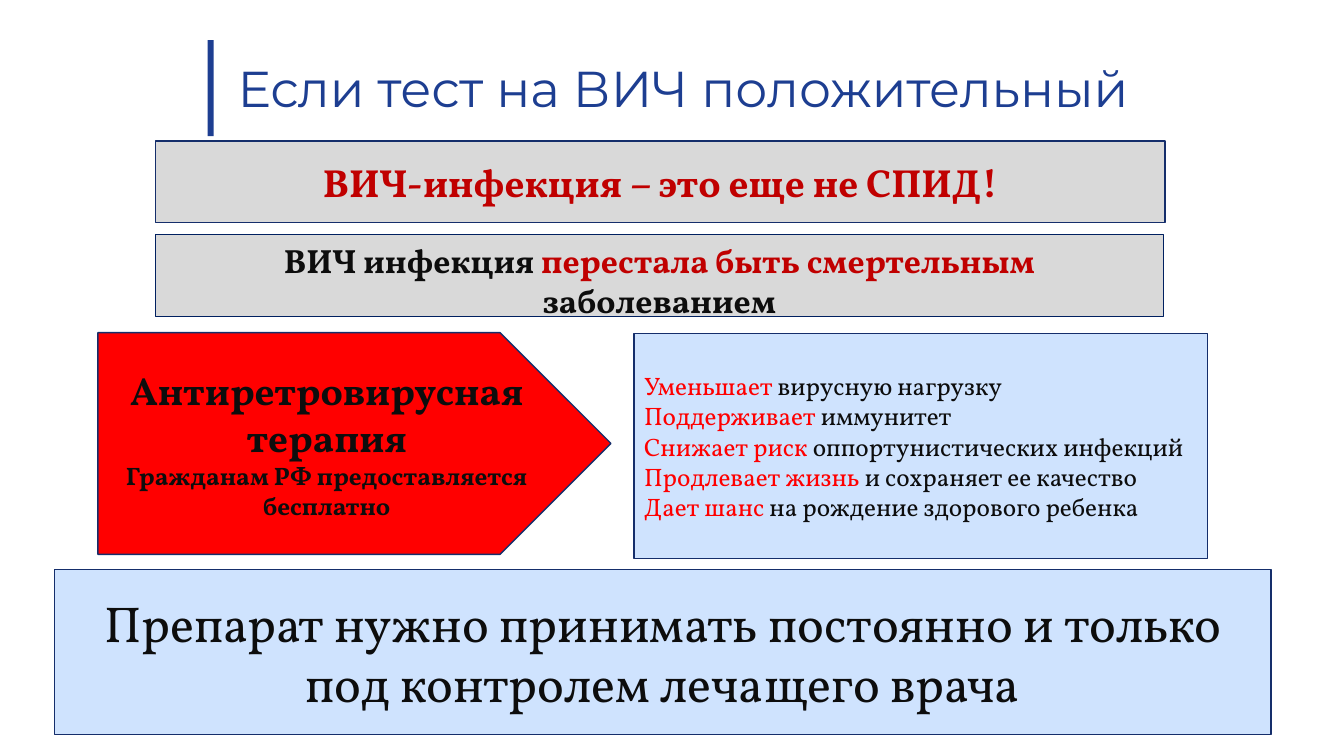
from pptx import Presentation
from pptx.dml.color import RGBColor
from pptx.enum.shapes import MSO_SHAPE
from pptx.enum.text import MSO_ANCHOR, PP_ALIGN
from pptx.util import Inches, Pt

RECTANGLE, PENTAGON = MSO_SHAPE.RECTANGLE, MSO_SHAPE.PENTAGON
TOP, MIDDLE = MSO_ANCHOR.TOP, MSO_ANCHOR.MIDDLE
LEFT, CENTER = PP_ALIGN.LEFT, PP_ALIGN.CENTER
WIDTH, HEIGHT = Inches(13.33), Inches(7.5)
TITLE_FONT, BODY_FONT = "Montserrat", "Vollkorn"
BLUE, NAVY, DEEP_NAVY = "1D3E91", "152E6B", "002060"
GREY, PALE_BLUE = "D9D9D9", "CFE3FE"
BLACK, RED, DARK_RED = "0D0D0D", "FF0000", "C00000"

HEADING_BOX = (15.45, 5.33, 77.63, 12.67)
BANNER_BOX = (11.55, 18.67, 75.15, 10.8)
STATEMENT_BOX = (11.55, 31.07, 75, 10.8)
THERAPY_BOX = (7.28, 44, 38.18, 29.33)
BENEFITS_BOX = (47.18, 44.13, 42.68, 29.73)
ADVICE_BOX = (4.05, 75.33, 90.53, 21.87)

BENEFITS = [
    ("Уменьшает", " вирусную нагрузку"),
    ("Поддерживает", " иммунитет"),
    ("Снижает риск", " оппортунистических инфекций"),
    ("Продлевает жизнь ", "и сохраняет ее качество"),
    ("Дает шанс ", "на рождение здорового ребенка"),
]


def color(value):
    """Turn a hex string into a colour."""
    return RGBColor.from_string(value)


def place(box):
    """Turn a box in percent of the slide into slide lengths."""
    left, top, width, height = box
    return [round(share * side / 100) for share, side in
            ((left, WIDTH), (top, HEIGHT), (width, WIDTH), (height, HEIGHT))]


def write(shape, lines, align=CENTER, anchor=MIDDLE, font=BODY_FONT, bold=False):
    """Write lines, each a size and its (text, colour) parts."""
    frame = shape.text_frame
    frame.word_wrap = True
    frame.vertical_anchor = anchor
    for index, (size, parts) in enumerate(lines):
        paragraph = frame.add_paragraph() if index else frame.paragraphs[0]
        paragraph.alignment = align
        for text, shade in parts:
            run = paragraph.add_run()
            run.text = text
            run.font.name = font
            run.font.size = Pt(size)
            run.font.bold = bold
            run.font.color.rgb = color(shade)


def panel(slide, box, fill, line=NAVY, weight=1, kind=RECTANGLE):
    """Draw a filled shape, outlined when a line colour is given."""
    shape = slide.shapes.add_shape(kind, *place(box))
    shape.shadow.inherit = False
    shape.fill.solid()
    shape.fill.fore_color.rgb = color(fill)
    if line:
        shape.line.color.rgb = color(line)
        shape.line.width = Pt(weight)
    else:
        shape.line.fill.background()
    return shape


def heading(slide, box):
    """Draw the accent bar and the title beside it."""
    left, top, width, height = box
    panel(slide, (left, top, 0.45, height), BLUE, None)
    title = slide.shapes.add_textbox(*place((left + 1.5, top + 0.4, width - 1.5, height)))
    write(title, [(36, [("Если тест на ВИЧ положительный", BLUE)])], LEFT, font=TITLE_FONT)
    title.text_frame.paragraphs[0].line_spacing = 0.9


def banner(slide, box):
    """Draw the main message."""
    write(panel(slide, box, GREY),
          [(28, [("ВИЧ-инфекция – это еще не СПИД!", DARK_RED)])], bold=True)


def statement(slide, box):
    """Draw the supporting message."""
    parts = [("ВИЧ инфекция ", BLACK), ("перестала быть смертельным ", DARK_RED),
             ("заболеванием", BLACK)]
    write(panel(slide, box, GREY, DEEP_NAVY, 0.75), [(24, parts)], anchor=TOP, bold=True)


def therapy(slide, box):
    """Draw the red arrow that names the treatment."""
    write(panel(slide, box, RED, kind=PENTAGON),
          [(28, [("Антиретровирусная терапия", BLACK)]),
           (18, [("Гражданам РФ предоставляется бесплатно", BLACK)])], bold=True)


def benefits(slide, box):
    """Draw the list of treatment benefits."""
    write(panel(slide, box, PALE_BLUE),
          [(18, [(effect, RED), (detail, BLACK)]) for effect, detail in BENEFITS], LEFT)


def advice(slide, box):
    """Draw the closing advice."""
    text = "Препарат нужно принимать постоянно и только под контролем лечащего врача"
    write(panel(slide, box, PALE_BLUE), [(36, [(text, BLACK)])])


def main():
    """Build and save the slide."""
    presentation = Presentation()
    presentation.slide_width, presentation.slide_height = WIDTH, HEIGHT
    slide = presentation.slides.add_slide(presentation.slide_layouts[6])
    heading(slide, HEADING_BOX)
    banner(slide, BANNER_BOX)
    statement(slide, STATEMENT_BOX)
    therapy(slide, THERAPY_BOX)
    benefits(slide, BENEFITS_BOX)
    advice(slide, ADVICE_BOX)
    presentation.save("out.pptx")


if __name__ == "__main__":
    main()
